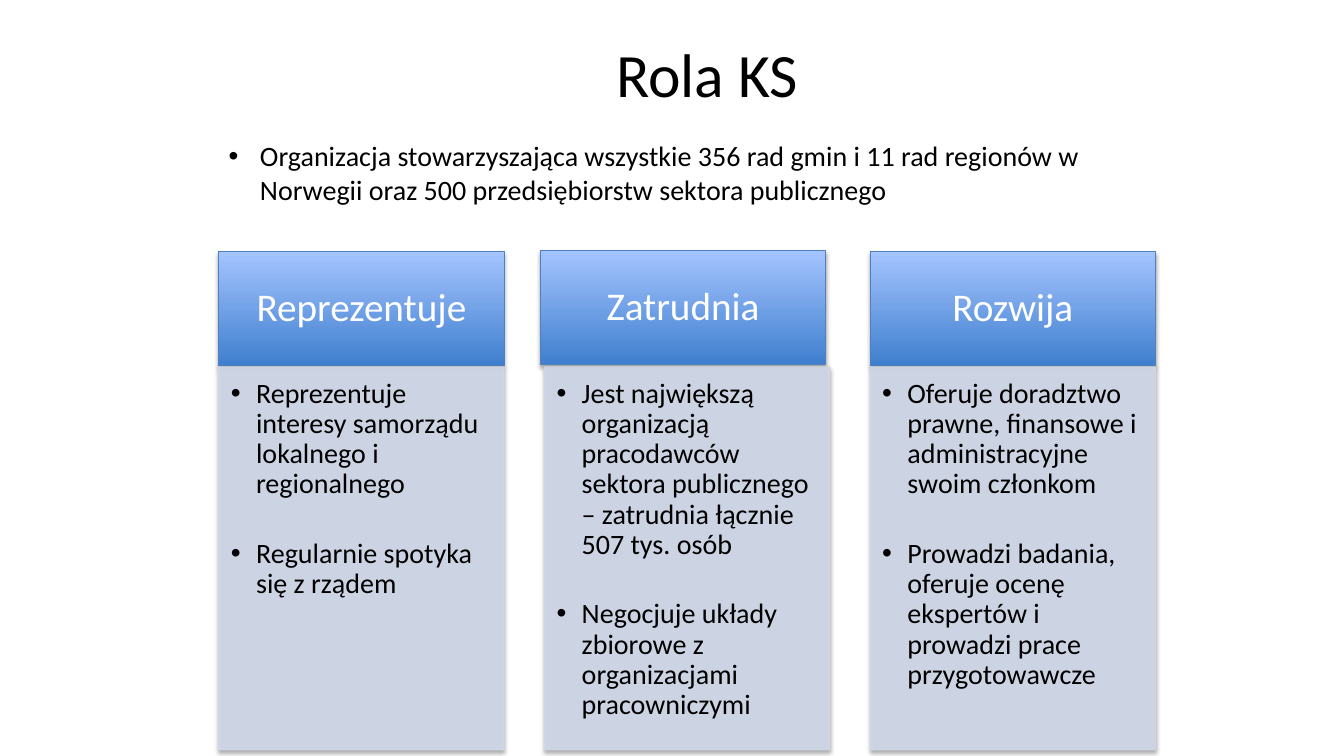
from lxml import etree
from pptx import Presentation
from pptx import util as u
from pptx.dml.color import RGBColor
from pptx.enum import shapes, text
from pptx.oxml.ns import qn

FONT = "Calibri"
BLACK, WHITE = "000000", "FFFFFF"
CARD_W, HEAD_H, BODY_TOP, BODY_H = 2.83, 1.13, 3.64, 3.8
INTRO = ("Organizacja stowarzyszająca wszystkie 356 rad gmin i 11 rad regionów w "
         "Norwegii oraz 500 przedsiębiorstw sektora publicznego")
ROLES = [
    ("Reprezentuje", (2.17, 2.5), 2.17,
     ["Reprezentuje interesy samorządu lokalnego i regionalnego",
      "Regularnie spotyka się z rządem"]),
    ("Zatrudnia", (5.36, 2.49), 5.4,
     ["Jest największą organizacją pracodawców sektora publicznego – zatrudnia "
      "łącznie 507 tys. osób",
      "Negocjuje układy zbiorowe z organizacjami pracowniczymi"]),
    ("Rozwija", (8.63, 2.5), 8.63,
     ["Oferuje doradztwo prawne, finansowe i administracyjne swoim członkom",
      "Prowadzi badania, oferuje ocenę ekspertów i prowadzi prace przygotowawcze"]),
]


def rgb(value):
    """Return the colour for a hex string."""
    return RGBColor.from_string(value)


def sub(parent, tag, **attrs):
    """Append a DrawingML element with its attributes."""
    return etree.SubElement(parent, qn(tag), {k: str(v) for k, v in attrs.items()})


def set_frame(sp, insets, anchor):
    """Prepare a wrapped text frame with insets and an anchor."""
    tf = sp.text_frame
    tf.word_wrap = True
    tf.vertical_anchor = anchor
    tf.margin_left, tf.margin_top, tf.margin_right, tf.margin_bottom = map(u.Inches, insets)
    return tf


def add_run(p, content, size, color):
    """Add one formatted run to a paragraph."""
    r = p.add_run()
    r.text = content
    r.font.name, r.font.size = FONT, u.Pt(size)
    r.font.color.rgb = rgb(color)


def add_bullets(tf, items, indent, spacing=1.0, gap=0):
    """Fill a text frame with bulleted paragraphs."""
    for i, item in enumerate(items):
        p = tf.add_paragraph() if i else tf.paragraphs[0]
        pPr = p._p.get_or_add_pPr()
        pPr.set("marL", str(u.Inches(indent)))
        pPr.set("indent", str(u.Inches(-indent)))
        sub(pPr, "a:buFont", typeface="Arial")
        sub(pPr, "a:buChar", char="•")
        p.alignment = text.PP_ALIGN.LEFT
        p.line_spacing = spacing
        if i:
            p.space_before = u.Pt(gap)
        add_run(p, item, 20, BLACK)


def add_textbox(s, box, anchor):
    """Add a text box and return its text frame."""
    sp = s.shapes.add_textbox(*map(u.Inches, box))
    return set_frame(sp, (0.1, 0.05, 0.1, 0.05), anchor)


def add_card(s, box, line):
    """Add an outlined rectangle with a soft shadow below it."""
    sp = s.shapes.add_shape(shapes.MSO_SHAPE.RECTANGLE, *map(u.Inches, box))
    sp.line.color.rgb = rgb(line)
    sp.line.width = u.Pt(0.75)
    sp.shadow.inherit = False
    effects = sp._element.spPr.find(qn("a:effectLst"))
    shadow = sub(effects, "a:outerShdw", blurRad=u.Pt(3.1), dist=u.Pt(1.8),
                 dir=90 * 60000, rotWithShape=0)
    sub(sub(shadow, "a:srgbClr", val=BLACK), "a:alpha", val=35000)
    return sp


def add_header(s, left, top, label):
    """Add a gradient header with a centred label."""
    sp = add_card(s, (left, top, CARD_W, HEAD_H), "4F81BD")
    sp.fill.gradient()
    sp.fill.gradient_angle = 90
    for stop, color in zip(sp.fill.gradient_stops, ("3F7FCE", "A4C4FF")):
        stop.color.rgb = rgb(color)
    tf = set_frame(sp, (0.22, 0.12, 0.22, 0.12), text.MSO_ANCHOR.MIDDLE)
    p = tf.paragraphs[0]
    p.alignment = text.PP_ALIGN.CENTER
    p.line_spacing = 0.9
    add_run(p, label, 28, WHITE)


def add_body(s, left, items):
    """Add a translucent panel with bullets."""
    sp = add_card(s, (left, BODY_TOP, CARD_W, BODY_H), "D0D8E8")
    sp.fill.solid()
    sp.fill.fore_color.rgb = rgb("D0D8E8")
    for clr in sp._element.spPr.iter(qn("a:srgbClr")):
        if clr.get("val") == "D0D8E8":
            sub(clr, "a:alpha", val=90000)
    tf = set_frame(sp, (0.12, 0.12, 0.16, 0.17), text.MSO_ANCHOR.TOP)
    add_bullets(tf, items, 0.25, 0.9, 28)


def main():
    """Build the slide and save it."""
    prs = Presentation()
    prs.slide_width, prs.slide_height = u.Inches(13.33), u.Inches(7.5)
    s = prs.slides.add_slide(prs.slide_layouts[6])
    title = add_textbox(s, (4.25, 0.1, 5.53, 1.25), text.MSO_ANCHOR.MIDDLE)
    title.paragraphs[0].alignment = text.PP_ALIGN.CENTER
    add_run(title.paragraphs[0], "Rola KS", 44, BLACK)
    for label, (left, top), body_left, items in ROLES:
        add_header(s, left, top, label)
        add_body(s, body_left, items)
    intro = add_textbox(s, (2.17, 1.33, 9.29, 0.77), text.MSO_ANCHOR.TOP)
    add_bullets(intro, [INTRO], 0.31)
    prs.save("out.pptx")


if __name__ == "__main__":
    main()
